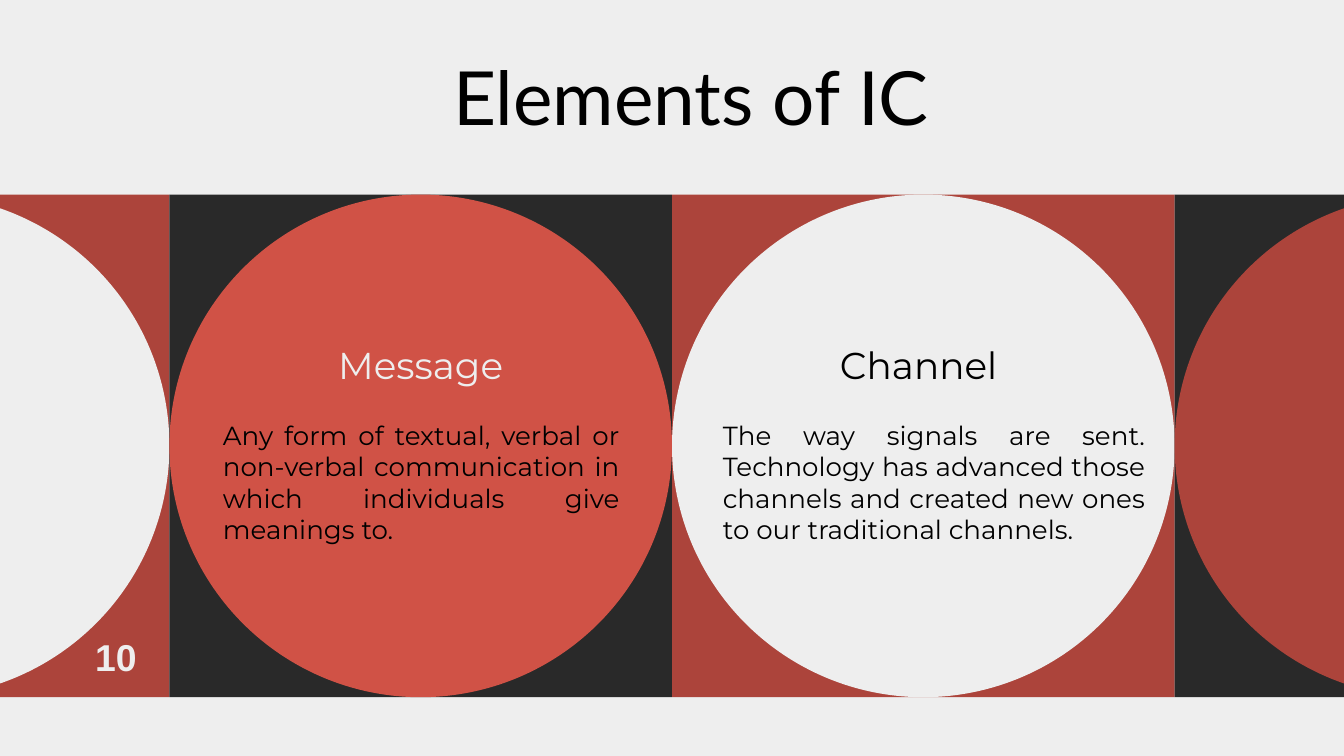
"""Build the "Elements of IC" slide: a band of circles in squares with two definitions."""
from dataclasses import dataclass

from pptx import Presentation
from pptx.dml.color import RGBColor
from pptx.enum.shapes import MSO_SHAPE
from pptx.enum.text import MSO_ANCHOR, MSO_AUTO_SIZE, PP_ALIGN
from pptx.util import Pt


@dataclass(frozen=True)
class Theme:
    light: str = "EEEEEE"
    dark: str = "292929"
    brick: str = "AC443B"
    coral: str = "D05246"
    black: str = "000000"
    title: int = 40
    heading: int = 20
    body: int = 14


theme = Theme()


def write(sp, text, box, size, color=theme.black, font="Montserrat", align=PP_ALIGN.LEFT, bold=False):
    sp.left, sp.top, sp.width, sp.height = [Pt(v) for v in box]
    tf = sp.text_frame
    tf.word_wrap = True
    tf.auto_size = MSO_AUTO_SIZE.NONE
    tf.vertical_anchor = MSO_ANCHOR.MIDDLE
    tf.margin_left = tf.margin_right = tf.margin_top = tf.margin_bottom = Pt(7.2)
    p = tf.paragraphs[0]
    p.alignment = align
    r = p.add_run()
    r.text = text
    r.font.name = font
    r.font.size = Pt(size)
    r.font.bold = bold
    r.font.color.rgb = RGBColor.from_string(color)


prs = Presentation()
prs.slide_width, prs.slide_height = Pt(720), Pt(405)
s = prs.slides.add_slide(prs.slide_layouts[5])
s.background.fill.solid()
s.background.fill.fore_color.rgb = RGBColor.from_string(theme.light)

side, band_top, first_left = 269.25, 104.25, -178.5
tiles = [
    (theme.brick, theme.light),
    (theme.dark, theme.coral),
    (theme.brick, theme.light),
    (theme.dark, theme.brick),
]
for i, colors in enumerate(tiles):
    for shape, color in zip((MSO_SHAPE.RECTANGLE, MSO_SHAPE.OVAL), colors):
        sp = s.shapes.add_shape(shape, Pt(first_left + i * side), Pt(band_top), Pt(side), Pt(side))
        sp.shadow.inherit = False
        sp.fill.solid()
        sp.fill.fore_color.rgb = RGBColor.from_string(color)
        sp.line.fill.background()

write(s.shapes.title, "Elements of IC", (235.5, 28.8, 281, 45.4), theme.title, font="Lato")

elements = [
    ("Message", theme.light, 110.9, 112.3, 226.8,
     "Any form of textual, verbal or non-verbal communication in which individuals give meanings to."),
    ("Channel ", theme.black, 380.2, 380.2, 240.5,
     "The way signals are sent. Technology has advanced those channels and created new ones "
     "to our traditional channels."),
]
for heading, color, heading_left, body_left, body_width, body in elements:
    write(s.shapes.add_textbox(0, 0, 0, 0), heading, (heading_left, 172.8, 229, 44.6),
          theme.heading, color=color, align=PP_ALIGN.CENTER)
    write(s.shapes.add_textbox(0, 0, 0, 0), body, (body_left, 218.2, body_width, 80),
          theme.body, align=PP_ALIGN.JUSTIFY)

write(s.shapes.add_textbox(0, 0, 0, 0), "10", (43.9, 335.9, 40.3, 31.7),
      theme.heading, color=theme.light, font="Arial", bold=True)

prs.save("out.pptx")
